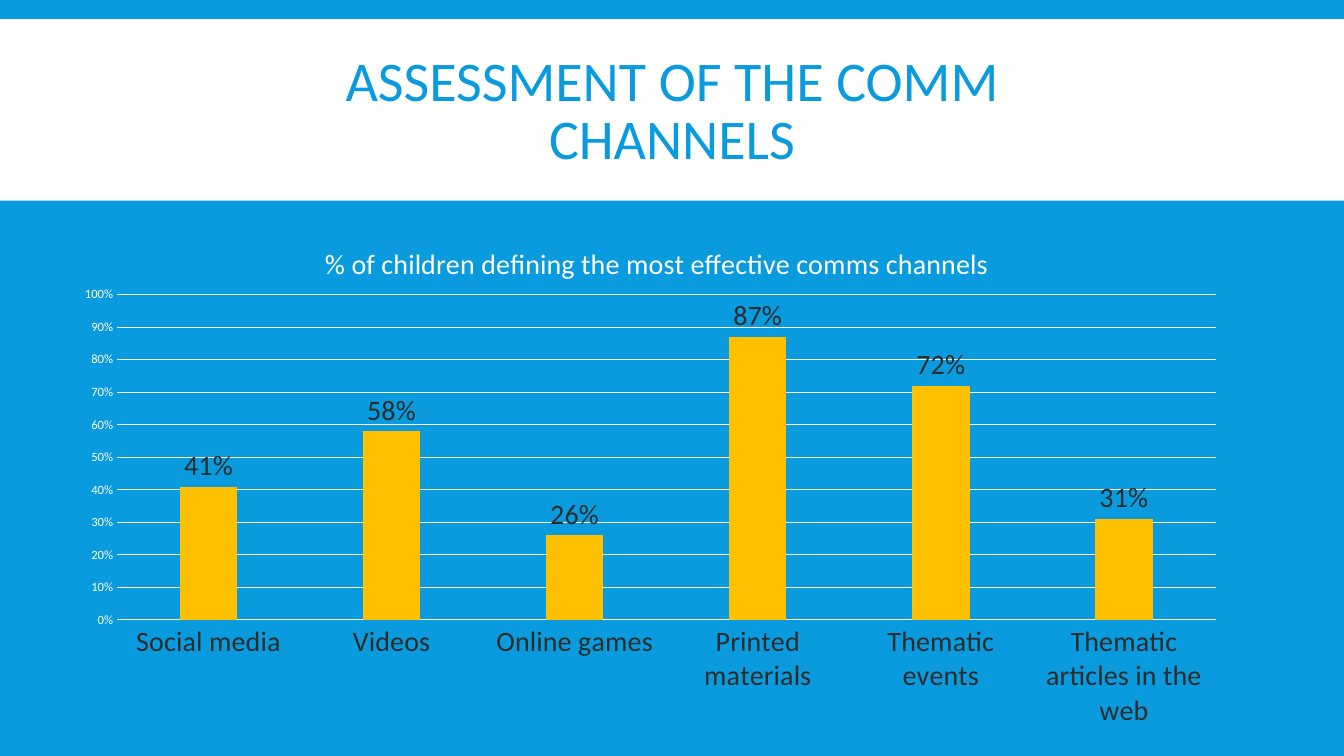
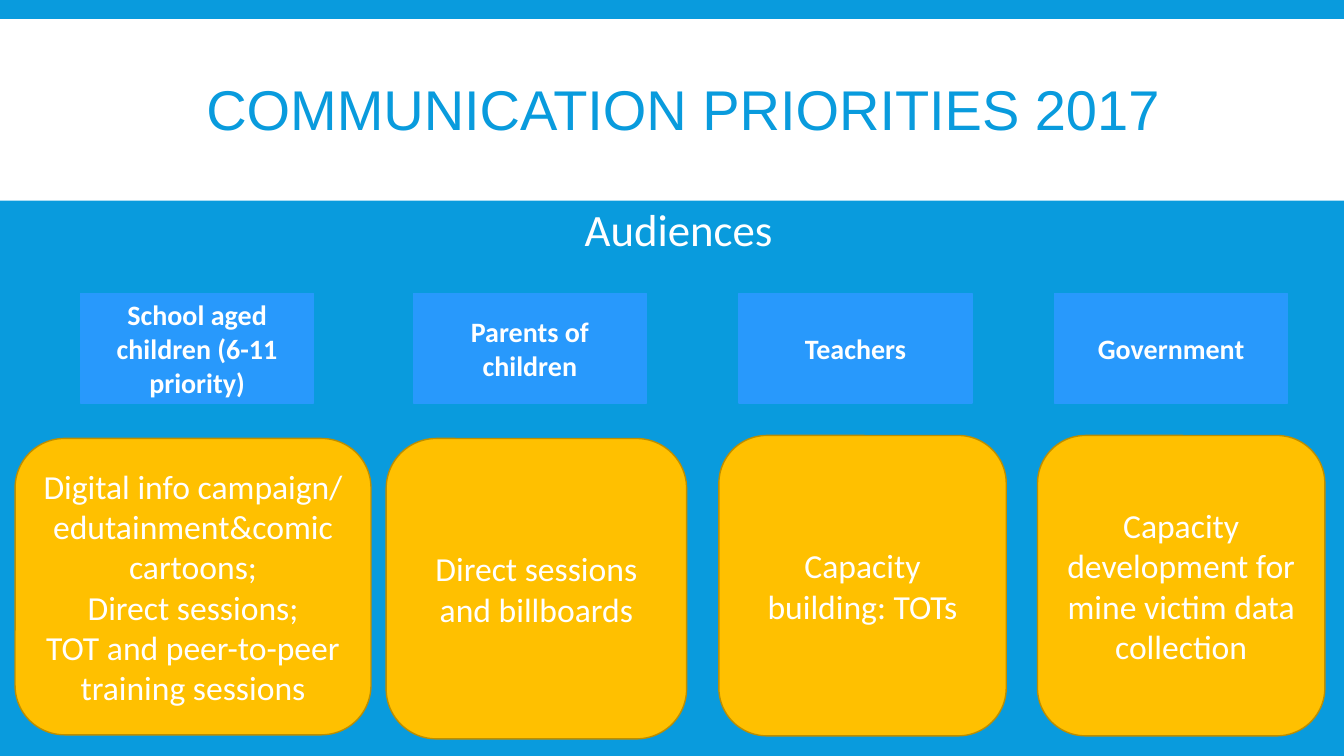
import pptx
import pptx.chart.data
import pptx.dml.color
import pptx.enum.chart
import pptx.enum.shapes
import pptx.enum.text
import pptx.oxml
import pptx.oxml.ns
import pptx.util

Inches, Pt = pptx.util.Inches, pptx.util.Pt
SHAPES = pptx.enum.shapes.MSO_SHAPE
CENTER = pptx.enum.text.PP_ALIGN.CENTER
MIDDLE = pptx.enum.text.MSO_ANCHOR.MIDDLE

BLUE, BRIGHT_BLUE = "099BDD", "2899FC"
YELLOW, DARK_YELLOW = "FFC000", "BD8E00"
WHITE, DARK = "FFFFFF", "2C2C2C"
TITLE_ONLY = 5

CHANNELS_TITLE = "ASSESSMENT OF THE COMM CHANNELS"
CHART_TITLE = "% of children defining the most effective comms channels"
CHANNELS = {
    "Social media": 0.41,
    "Videos": 0.58,
    "Online games": 0.26,
    "Printed materials": 0.87,
    "Thematic events": 0.72,
    "Thematic articles in the web": 0.31,
}

PRIORITIES_TITLE = "COMMUNICATION PRIORITIES 2017"
HEADER_TOP, HEADER_WIDTH, HEADER_HEIGHT = 2.91, 2.31, 1.09
# audience, header left, activities, activity box
AUDIENCES = [
    ("School aged children (6-11 priority)", 0.8,
     ["Digital info campaign/ edutainment&comic cartoons;", "Direct sessions;",
      "TOT and peer-to-peer training sessions"], (0.15, 4.35, 3.53, 2.94)),
    ("Parents of children", 4.1,
     ["Direct sessions and billboards"], (3.83, 4.35, 2.98, 2.98)),
    ("Teachers", 7.33,
     ["Capacity building: TOTs"], (7.13, 4.32, 2.85, 2.98)),
    ("Government", 10.46,
     ["Capacity development for mine victim data collection"],
     (10.29, 4.32, 2.85, 2.98)),
]


def rgb(color):
    return pptx.dml.color.RGBColor.from_string(color)


def set_font(font, size, color=WHITE, name="Calibri", bold=False):
    values = {"size": Pt(size), "name": name, "bold": bold}
    for attribute, value in values.items():
        setattr(font, attribute, value)
    font.color.rgb = rgb(color)


def write(text_frame, lines, size, align=None, **font_format):
    """Fill a text frame with one formatted paragraph per line."""
    text_frame.word_wrap = True
    for index, line in enumerate(lines):
        paragraph = text_frame.add_paragraph() if index else text_frame.paragraphs[0]
        paragraph.alignment = align
        run = paragraph.add_run()
        run.text = line
        set_font(run.font, size, **font_format)


def add_box(slide, kind, box, fill, line, lines=(), size=20, bold=False):
    shape = slide.shapes.add_shape(kind, *map(Inches, box))
    shape.shadow.inherit = False
    shape.fill.solid()
    shape.fill.fore_color.rgb = rgb(fill)
    if line:
        shape.line.color.rgb = rgb(line)
        shape.line.width = Pt(1)
    else:
        shape.line.fill.background()
    shape.text_frame.vertical_anchor = MIDDLE
    write(shape.text_frame, lines, size, CENTER, bold=bold)
    return shape


def style_master(presentation, slide):
    """Give the master its blue background and the white title band."""
    master = presentation.slide_master
    master.background.fill.solid()
    master.background.fill.fore_color.rgb = rgb(BLUE)
    band = add_box(slide, SHAPES.RECTANGLE, (0, 0.19, 13.33, 1.8), WHITE, None)
    master.shapes.element.insert(2, band.element)


def add_titled_slide(presentation, text, left, width, font_name):
    slide = presentation.slides.add_slide(presentation.slide_layouts[TITLE_ONLY])
    title = slide.shapes.title
    box = {"left": left, "top": 0.3, "width": width, "height": 1.65}
    for attribute, value in box.items():
        setattr(title, attribute, Inches(value))
    title.text_frame.vertical_anchor = MIDDLE
    title.text_frame.auto_size = pptx.enum.text.MSO_AUTO_SIZE.NONE
    write(title.text_frame, [text], 40, CENTER, color=BLUE, name=font_name)
    title.text_frame.paragraphs[0].line_spacing = 0.85
    return slide


def place_in_chart(element, index, **fractions):
    """Fix a chart part at fractions of the chart's width and height."""
    for old in element.findall(pptx.oxml.ns.qn("c:layout")):
        element.remove(old)
    target = '<c:layoutTarget val="inner"/>' if "w" in fractions else ""
    modes = "".join(f'<c:{key}Mode val="edge"/>' for key in "xy")
    values = "".join(f'<c:{key} val="{value}"/>' for key, value in fractions.items())
    element.insert(index, pptx.oxml.parse_xml(
        f'<c:layout {pptx.oxml.ns.nsdecls("c")}><c:manualLayout>'
        f"{target}{modes}{values}</c:manualLayout></c:layout>"))


def style_axis(axis, size, color):
    no_tick = pptx.enum.chart.XL_TICK_MARK.NONE
    axis.major_tick_mark = axis.minor_tick_mark = no_tick
    set_font(axis.tick_labels.font, size, color)


def style_line(line):
    line.color.rgb = rgb(WHITE)
    line.width = Pt(0.75)


def add_channel_chart(slide):
    data = pptx.chart.data.CategoryChartData(number_format="0%")
    data.categories = list(CHANNELS)
    data.add_series("Series 1", list(CHANNELS.values()))
    chart = slide.shapes.add_chart(
        pptx.enum.chart.XL_CHART_TYPE.COLUMN_CLUSTERED,
        *map(Inches, (0.6, 2.16, 11.69, 5.17)), data).chart
    chart.has_legend = False
    set_font(chart.font, 10)

    write(chart.chart_title.text_frame, [CHART_TITLE], 20)
    chart.chart_title.include_in_layout = False
    place_in_chart(chart.chart_title._element, 1, x=0.22, y=0.04)
    plot_area = chart.plots[0]._element.getparent()
    place_in_chart(plot_area, 0, x=0.048, y=0.148, w=0.932, h=0.624)

    style_axis(chart.category_axis, 20, DARK)
    style_line(chart.category_axis.format.line)
    value_axis = chart.value_axis
    style_axis(value_axis, 9, WHITE)
    value_axis.format.line.fill.background()
    style_line(value_axis.major_gridlines.format.line)
    scale = {"minimum_scale": 0, "maximum_scale": 1, "major_unit": 0.1}
    for attribute, value in scale.items():
        setattr(value_axis, attribute, value)

    plot = chart.plots[0]
    plot.gap_width, plot.overlap, plot.vary_by_categories = 219, -27, False
    fill = plot.series[0].format.fill
    fill.solid()
    fill.fore_color.rgb = rgb(YELLOW)
    plot.has_data_labels = True
    labels = plot.data_labels
    labels.show_value = True
    labels.position = pptx.enum.chart.XL_LABEL_POSITION.OUTSIDE_END
    set_font(labels.font, 20, DARK)
    for number_format in (labels, value_axis.tick_labels):
        number_format.number_format = "0%"
        number_format.number_format_is_linked = False


def add_audiences(slide):
    heading = slide.shapes.add_textbox(*map(Inches, (5.7, 1.95, 2.15, 0.64)))
    write(heading.text_frame, ["Audiences"], 32)
    for audience, left, activities, activity_box in AUDIENCES:
        header_box = (left, HEADER_TOP, HEADER_WIDTH, HEADER_HEIGHT)
        add_box(slide, SHAPES.RECTANGLE, header_box, BRIGHT_BLUE, BRIGHT_BLUE,
                [audience], bold=True)
        add_box(slide, SHAPES.ROUNDED_RECTANGLE, activity_box, YELLOW, DARK_YELLOW,
                activities, size=24)


def main():
    presentation = pptx.Presentation()
    presentation.slide_width, presentation.slide_height = Inches(13.33), Inches(7.5)
    channels = add_titled_slide(presentation, CHANNELS_TITLE, 2.6, 8.13, "Calibri")
    style_master(presentation, channels)
    add_channel_chart(channels)
    priorities = add_titled_slide(presentation, PRIORITIES_TITLE, 0.51, 12.53, "Arial")
    add_audiences(priorities)
    presentation.save("out.pptx")


if __name__ == "__main__":
    main()
